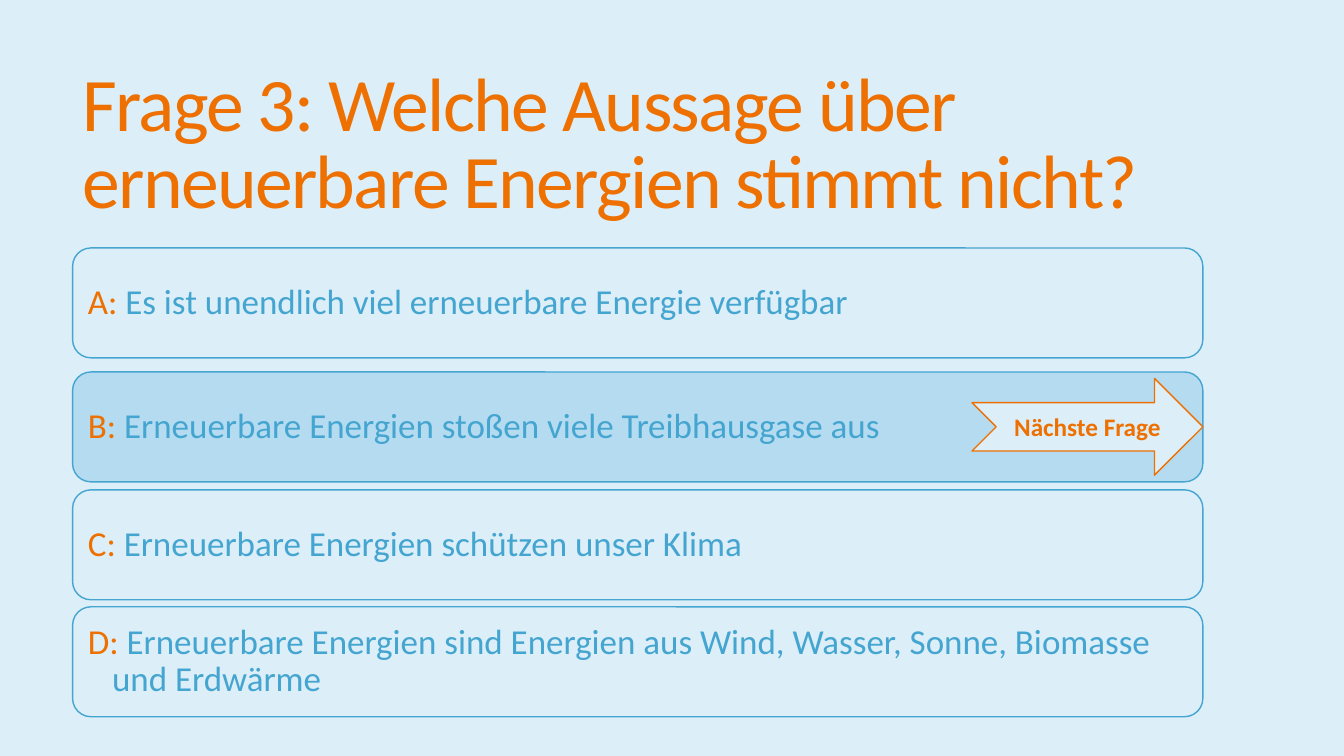
from pptx import Presentation
from pptx.dml.color import RGBColor
from pptx.enum.shapes import MSO_SHAPE
from pptx.enum.text import MSO_ANCHOR, PP_ALIGN
from pptx.util import Inches, Pt

ROUNDED = MSO_SHAPE.ROUNDED_RECTANGLE
NOTCHED_ARROW = MSO_SHAPE.NOTCHED_RIGHT_ARROW
MIDDLE = MSO_ANCHOR.MIDDLE
LEFT = PP_ALIGN.LEFT
CENTER = PP_ALIGN.CENTER

PALE_BLUE = RGBColor(0xDC, 0xEE, 0xF8)
SOFT_BLUE = RGBColor(0xB5, 0xDB, 0xF0)
BLUE = RGBColor(0x44, 0xA5, 0xD0)
ORANGE = RGBColor(0xED, 0x70, 0x00)

FONT = "Calibri"
ANSWER_LEFT, ANSWER_WIDTH, ANSWER_HEIGHT = 0.72, 11.21, 1.09
ANSWERS = [
    ("A: ", "Es ist unendlich viel erneuerbare Energie verfügbar", 2.46, PALE_BLUE),
    ("B: ", "Erneuerbare Energien stoßen viele Treibhausgase aus", 3.69, SOFT_BLUE),
    ("C: ", "Erneuerbare Energien schützen unser Klima", 4.86, PALE_BLUE),
    ("D: ", "Erneuerbare Energien sind Energien aus Wind, Wasser, Sonne, Biomasse "
            "und Erdwärme", 6.02, PALE_BLUE),
]


def format_run(run, size, color, bold=False):
    run.font.name = FONT
    run.font.size = Pt(size)
    run.font.color.rgb = color
    run.font.bold = bold


def add_outlined_shape(slide, kind, box, fill, line):
    shape = slide.shapes.add_shape(kind, *map(Inches, box))
    shape.shadow.inherit = False
    shape.fill.solid()
    shape.fill.fore_color.rgb = fill
    shape.line.color.rgb = line
    shape.line.width = Pt(1)
    shape.text_frame.word_wrap = True
    shape.text_frame.vertical_anchor = MIDDLE
    return shape


def add_title(slide, box, text):
    title = slide.shapes.add_textbox(*map(Inches, box))
    title.text_frame.word_wrap = True
    title.text_frame.vertical_anchor = MIDDLE
    title.text_frame.text = text
    paragraph = title.text_frame.paragraphs[0]
    paragraph.line_spacing = 0.85
    run = paragraph.runs[0]
    format_run(run, 54, ORANGE)
    run.font._element.set("spc", "-120")


def add_answer(slide, box, letter, text, fill):
    answer = add_outlined_shape(slide, ROUNDED, box, fill, BLUE)
    paragraph = answer.text_frame.paragraphs[0]
    paragraph.alignment = LEFT
    paragraph.line_spacing = 0.9
    properties = paragraph._p.get_or_add_pPr()
    properties.set("marL", str(Inches(0.24)))
    properties.set("indent", str(Inches(-0.24)))
    for words, color in ((letter, ORANGE), (text, BLUE)):
        run = paragraph.add_run()
        run.text = words
        format_run(run, 25, color)


def add_next_arrow(slide, box, text):
    left, top, width, height = box
    arrow_width, arrow_height = 2.29, 0.96
    arrow_box = (left + width - arrow_width, top + (height - arrow_height) / 2,
                 arrow_width, arrow_height)
    arrow = add_outlined_shape(slide, NOTCHED_ARROW, arrow_box, PALE_BLUE, ORANGE)
    arrow.text_frame.text = text
    paragraph = arrow.text_frame.paragraphs[0]
    paragraph.alignment = CENTER
    format_run(paragraph.runs[0], 18, ORANGE, bold=True)


def build_question(slide):
    slide.background.fill.solid()
    slide.background.fill.fore_color.rgb = PALE_BLUE
    add_title(slide, (0.72, 0.55, 12.45, 1.81),
              "Frage 3: Welche Aussage über erneuerbare Energien stimmt nicht?")
    for letter, text, top, fill in ANSWERS:
        box = (ANSWER_LEFT, top, ANSWER_WIDTH, ANSWER_HEIGHT)
        add_answer(slide, box, letter, text, fill)
        if fill == SOFT_BLUE:
            add_next_arrow(slide, box, "Nächste Frage")


def main():
    presentation = Presentation()
    presentation.slide_width = Inches(13.33)
    presentation.slide_height = Inches(7.5)
    build_question(presentation.slides.add_slide(presentation.slide_layouts[6]))
    presentation.save("out.pptx")


if __name__ == "__main__":
    main()
